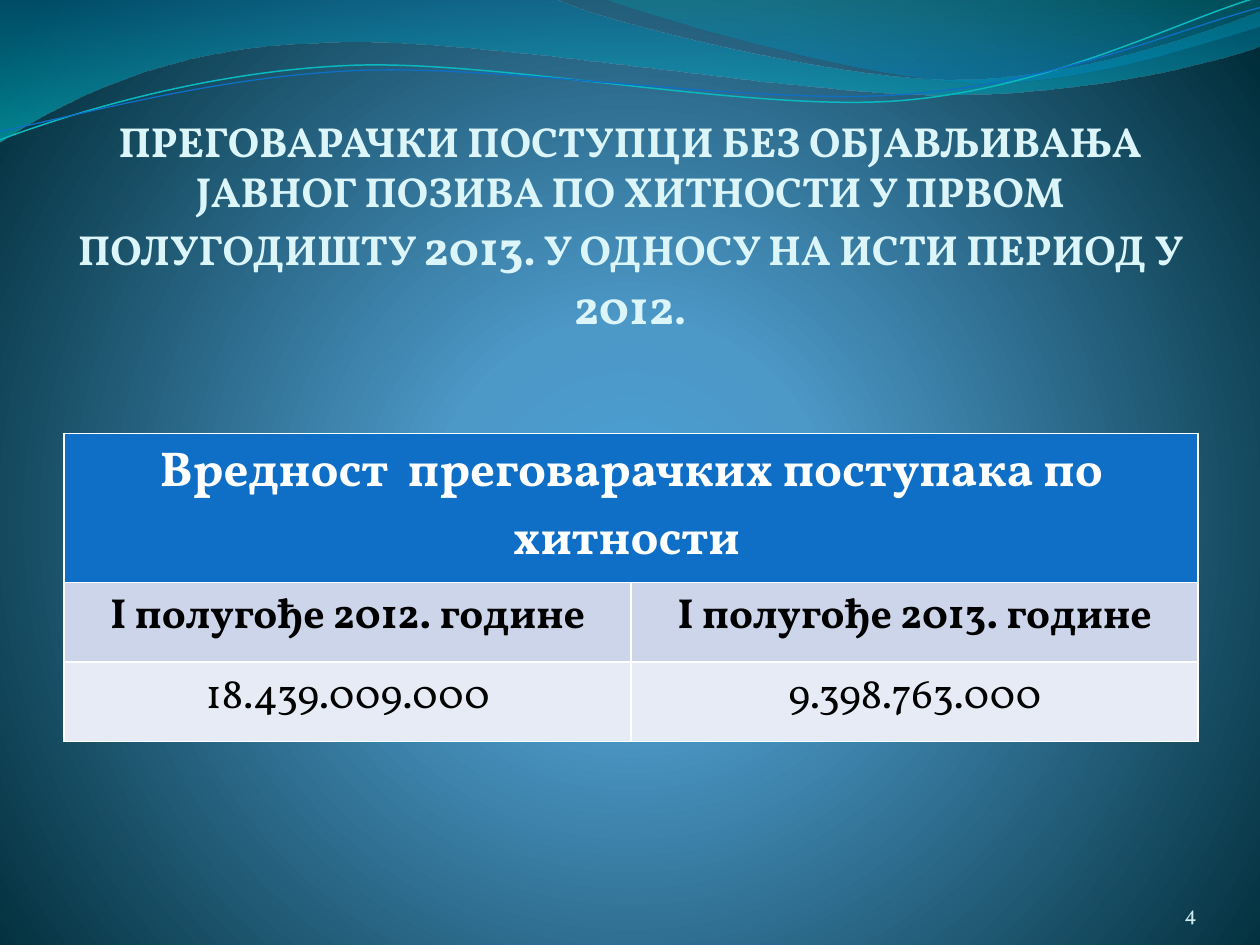
from dataclasses import dataclass
from math import cos, radians, sin

from lxml import etree
from pptx import Presentation
from pptx.dml.color import RGBColor
from pptx.enum.text import MSO_ANCHOR, MSO_AUTO_SIZE, PP_ALIGN
from pptx.oxml.ns import qn
from pptx.util import Inches, Pt

CENTER, RIGHT = PP_ALIGN.CENTER, PP_ALIGN.RIGHT
BOTTOM, NO_FIT = MSO_ANCHOR.BOTTOM, MSO_AUTO_SIZE.NONE


@dataclass(frozen=True)
class Theme:
    """Colours, font and type sizes of the slide."""
    font: str = "Vollkorn"
    title: str = "DBF5F9"
    number: str = "D1EAEE"
    white: str = "FFFFFF"
    black: str = "000000"
    blue: str = "0F6FC6"
    teal: str = "0AB8BF"
    band_dark: str = "CCD5EA"
    band_light: str = "E7EBF5"
    large: int = 28
    medium: int = 24
    small: int = 12
    background: tuple = ((0, "4AA0D6", 100), (25, "4C98C7", 100), (100, "002C38", 100))
    wide_wave: tuple = ((0, "0074A1", 45), (100, "00C6CF", 55))
    right_wave: tuple = ((0, "00A1A9", 30), (80, "008BBF", 45))


T = Theme()

LINE_ANGLE = 357.3
WIDE_WAVE = [
    [(0, 0)], [(4.4, -0.01)],
    [(4.76, 0.17), (6.64, 0.63), (7.58, 0.63)],
    [(8.53, 0.63), (9.58, 0.26), (10, 0.09)], [(10.01, 0.36)],
    [(9.83, 0.44), (8.7, 0.76), (7.46, 0.75)],
    [(6.22, 0.75), (3.82, 0.28), (2.57, 0.34)],
    [(1.29, 0.36), (0.46, 0.83), (-0.01, 1.13)], [(0, 0)],
]
RIGHT_WAVE = [
    [(4.79, -0.01)],
    [(5.09, 0.11), (6.82, 0.62), (7.69, 0.65)],
    [(8.56, 0.69), (9.61, 0.32), (10, 0.21)], [(10, 0)], [(4.79, -0.01)],
]
TEAL_LINE = [
    [(0, 1.11)],
    [(0.48, 0.93), (1.58, 0.57), (2.77, 0.52)],
    [(3.95, 0.47), (5.93, 0.89), (7.13, 0.8)],
    [(8.33, 0.71), (9.38, 0.15), (9.98, -0.02)],
]
BLUE_LINE = [
    [(0, 1.04)],
    [(0.47, 0.96), (1.64, 0.61), (2.83, 0.56)],
    [(4.03, 0.51), (5.97, 0.84), (7.17, 0.75)],
    [(8.36, 0.67), (9.41, 0.21), (10, 0.06)],
]
TITLE = [
    ("ПРЕГОВАРАЧКИ ПОСТУПЦИ БЕЗ ОБЈАВЉИВАЊА ЈАВНОГ ПОЗИВА ПО ХИТНОСТИ "
     "У ПРВОМ ПОЛУГОДИШТУ ", T.medium),
    ("2013", T.large),
    (". У ОДНОСУ НА ИСТИ ПЕРИОД У ", T.medium),
    ("2012", T.large),
    (".", T.medium),
]
ROWS = [
    (["Вредност  преговарачких поступака по хитности "], T.large, T.white, True, T.blue),
    (["I полугође 2012. године", "I полугође 2013. године"],
     T.medium, T.black, True, T.band_dark),
    (["18.439.009.000", "9.398.763.000"], T.medium, T.black, False, T.band_light),
]


def sub(parent, tag, **attrs):
    """Append a DrawingML element and return it."""
    return etree.SubElement(parent, qn(tag), {k: str(v) for k, v in attrs.items()})


def set_gradient(fill, owner, stops, circle=False):
    """Give a fill gradient stops with opacity, running down or from a circle."""
    fill.gradient()
    grad = next(owner.iter(qn("a:gradFill")))
    for child in list(grad):
        grad.remove(child)
    gs_list = sub(grad, "a:gsLst")
    for pos, color, opacity in stops:
        gs = sub(gs_list, "a:gs", pos=pos * 1000)
        clr = sub(gs, "a:srgbClr", val=color)
        if opacity < 100:
            sub(clr, "a:alpha", val=opacity * 1000)
    if circle:
        way = sub(grad, "a:path", path="circle")
        sub(way, "a:fillToRect", l=10000, t=110000, r=10000, b=100000)
    else:
        sub(grad, "a:lin", ang=5400000, scaled=1)


def add_curve(s, box, segments, angle=0, closed=False):
    """Draw lines and cubic curves in a box turned by an angle."""
    left, top, width, height = box
    fb = s.shapes.build_freeform(Inches(left), Inches(top))
    fb.add_line_segments([(Inches(left + width), Inches(top + height))], close=False)
    sp = fb.convert_to_shape()
    sp.shadow.inherit = False
    sp.rotation = angle
    way = next(sp.element.iter(qn("a:path")))
    for child in list(way):
        way.remove(child)
    c, n = cos(radians(-angle)), sin(radians(-angle))
    for i, points in enumerate(segments):
        tag = "a:cubicBezTo" if len(points) == 3 else "a:lnTo" if i else "a:moveTo"
        step = sub(way, tag)
        for x, y in points:
            dx, dy = x - left - width / 2, y - top - height / 2
            sub(step, "a:pt", x=Inches(width / 2 + dx * c - dy * n),
                y=Inches(height / 2 + dx * n + dy * c))
    if closed:
        sub(way, "a:close")
    return sp


def add_wave(s, box, segments, stops):
    """Add a translucent filled wave."""
    sp = add_curve(s, box, segments, closed=True)
    sp.line.fill.background()
    set_gradient(sp.fill, sp.element, stops)


def add_wave_line(s, box, segments, color, width):
    """Add a thin curved line."""
    sp = add_curve(s, box, segments, LINE_ANGLE)
    sp.fill.background()
    sp.line.color.rgb = RGBColor.from_string(color)
    sp.line.width = Pt(width)


def add_run(p, text, size, color, bold=False):
    """Add one formatted run."""
    r = p.add_run()
    r.text = text
    r.font.name, r.font.size, r.font.bold = T.font, Pt(size), bold
    r.font.color.rgb = RGBColor.from_string(color)


def set_frame(tf, align, top=0):
    """Set up a bottom-anchored frame and return its paragraph."""
    tf.word_wrap, tf.auto_size, tf.vertical_anchor = True, NO_FIT, BOTTOM
    tf.margin_left = tf.margin_right = tf.margin_bottom = 0
    tf.margin_top = Inches(top)
    p = tf.paragraphs[0]
    p.alignment = align
    return p


def add_title(s):
    """Place and fill the title placeholder in front of the waves."""
    sp = s.shapes.title
    sp.left, sp.top, sp.width, sp.height = map(Inches, (0.5, 0.77, 9, 1.88))
    p = set_frame(sp.text_frame, CENTER, 0.05)
    for text, size in TITLE:
        add_run(p, text, size, T.title, True)
    s.shapes.element.append(sp.element)


def add_values_table(s):
    """Add the table comparing the two half-years."""
    frame = s.shapes.add_table(3, 2, *map(Inches, (0.51, 3.44, 9, 2.29)))
    table = frame.table
    table.cell(0, 0).merge(table.cell(0, 1))
    for i, (texts, size, color, bold, fill) in enumerate(ROWS):
        table.rows[i].height = Inches(0.63)
        for j, text in enumerate(texts):
            cell = table.cell(i, j)
            cell.fill.solid()
            cell.fill.fore_color.rgb = RGBColor.from_string(fill)
            p = cell.text_frame.paragraphs[0]
            p.alignment = CENTER
            add_run(p, text, size, color, bold)
    frame.height = Inches(2.29)


def add_slide_number(s, text):
    """Add the slide number at the lower right."""
    sp = s.shapes.add_textbox(*map(Inches, (8.67, 6.95, 0.83, 0.4)))
    add_run(set_frame(sp.text_frame, RIGHT), text, T.small, T.number)


def main():
    """Build and save the slide."""
    prs = Presentation()
    prs.slide_width, prs.slide_height = Inches(10), Inches(7.5)
    s = prs.slides.add_slide(prs.slide_layouts[5])
    set_gradient(s.background.fill, s.element, T.background, circle=True)
    add_wave(s, (-0.01, -0.01, 10.02, 1.14), WIDE_WAVE, T.wide_wave)
    add_wave(s, (4.79, -0.01, 5.21, 0.7), RIGHT_WAVE, T.right_wave)
    add_wave_line(s, (-0.02, 0.22, 10.02, 0.71), TEAL_LINE, T.teal, 0.85)
    add_wave_line(s, (-0.02, 0.3, 10.03, 0.58), BLUE_LINE, T.blue, 0.75)
    add_title(s)
    add_values_table(s)
    add_slide_number(s, "4")
    prs.save("out.pptx")


if __name__ == "__main__":
    main()
